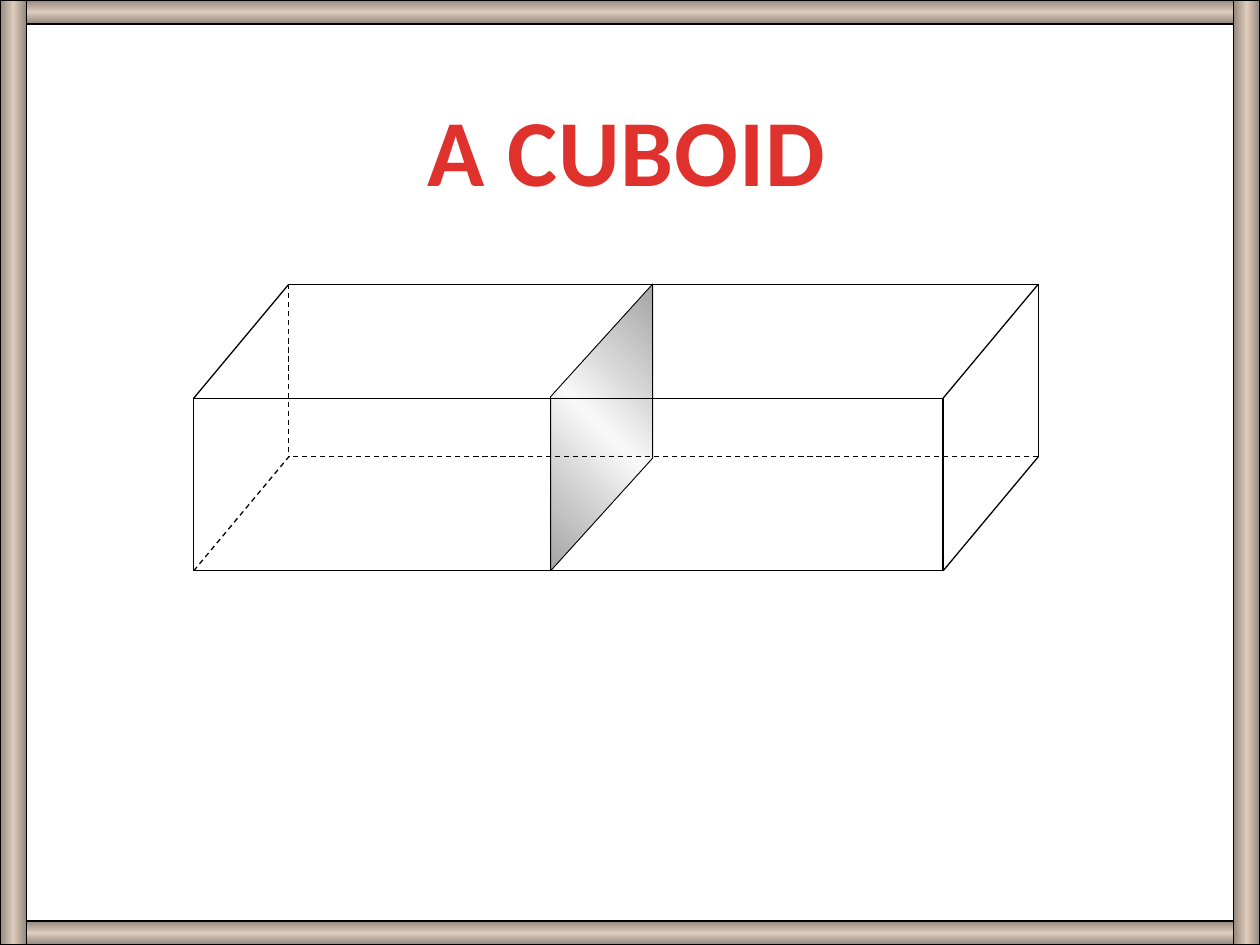
from copy import deepcopy

from lxml import etree
from pptx import Presentation
from pptx.dml.color import RGBColor
from pptx.enum.dml import MSO_LINE
from pptx.enum.shapes import MSO_CONNECTOR, MSO_SHAPE
from pptx.enum.text import MSO_AUTO_SIZE, PP_ALIGN
from pptx.oxml.ns import qn
from pptx.util import Pt

RECT = MSO_SHAPE.RECTANGLE
LINE = MSO_CONNECTOR.STRAIGHT
DASH = MSO_LINE.DASH
CENTER = PP_ALIGN.CENTER
GROW = MSO_AUTO_SIZE.SHAPE_TO_FIT_TEXT

BLACK = RGBColor(0x00, 0x00, 0x00)
DARK = RGBColor(0x93, 0x87, 0x7D)
TAN = RGBColor(0xDE, 0xCC, 0xBC)
GREY = RGBColor(0xA4, 0xA4, 0xA4)
PALE = RGBColor(0xF8, 0xF8, 0xF8)
RED = RGBColor(0xE0, 0x32, 0x2D)
WINE = RGBColor(0xA2, 0x20, 0x1C)

WIDE, HIGH = 720, 540


def shade(fill, node, stops, angle):
    """Give a fill gradient stops of (position, colour) at an angle."""
    fill.gradient()
    fill.gradient_angle = angle
    group = node.find(".//" + qn("a:gsLst"))
    while len(group) < len(stops):
        group.append(deepcopy(group[0]))
    for stop, (place, color) in zip(fill.gradient_stops, stops):
        stop.position = place
        stop.color.rgb = color


def outline(shape, width=0.75):
    """Give a shape a plain black line and no shadow."""
    shape.shadow.inherit = False
    shape.line.color.rgb = BLACK
    shape.line.width = Pt(width)


def edge(slide, start, end, dashed=False):
    """Draw one edge between two points."""
    line = slide.shapes.add_connector(LINE, *map(Pt, start + end))
    line.line.color.rgb = BLACK
    line.line.width = Pt(0.75)
    if dashed:
        line.line.dash_style = DASH
    etree.SubElement(line._element.spPr, qn("a:effectLst"))


def frame(slide, left, top, width, height):
    """Draw the four shaded bars around the box."""
    beam, post = 13.68, 15.12
    bars = [
        (left, top, width, beam, 90),
        (left, top + height - beam, width, beam, 90),
        (left, top, post, height, 0),
        (left + width - post, top, post, height, 0),
    ]
    for *box, angle in bars:
        bar = slide.shapes.add_shape(RECT, *map(Pt, box))
        shade(bar.fill, bar._element, [(0, DARK), (0.5, TAN), (1, DARK)], angle)
        outline(bar)


def title(slide, left, top, width, height):
    """Write the title in the box."""
    box = slide.shapes.add_textbox(*map(Pt, (left, top, width, height)))
    text = box.text_frame
    text.text = "A CUBOID"
    text.word_wrap = False
    text.auto_size = GROW
    line = text.paragraphs[0]
    line.alignment = CENTER
    run = line.runs[0]
    run.font.name = "Calibri"
    run.font.size = Pt(54)
    run.font.bold = True
    shade(run.font.fill, run._r, [(0.25, RED), (1, WINE)], 270)
    run._r.get_or_add_rPr().set("spc", "50")


def divider(slide, left, top, width, height):
    """Draw the shaded cross-section slanting across the box."""
    right, base, rise = left + width, top + height, 64.4
    pen = slide.shapes.build_freeform(Pt(left), Pt(base))
    corners = [(left, top + rise), (right, top), (right, base - rise)]
    pen.add_line_segments([(Pt(x), Pt(y)) for x, y in corners])
    plane = pen.convert_to_shape()
    shade(plane.fill, plane._element, [(0, GREY), (0.5, PALE), (1, GREY)], 45)
    outline(plane, 0.5)


def cuboid(slide, left, top, width, height):
    """Draw the cuboid with its hidden edges dashed."""
    shift, rise = 54.36, 65.16
    right, base = left + width, top + height
    near, low = right - shift, base - rise
    back = left + shift
    edge(slide, (right, low), (back, low), True)
    edge(slide, (left, base), (back, low), True)
    edge(slide, (back, top), (back, low), True)
    box = (left, top + rise, width - shift, height - rise)
    front = slide.shapes.add_shape(RECT, *map(Pt, box))
    front.fill.background()
    outline(front)
    for x, y in [(left, top + rise), (near, top + rise), (near, base)]:
        edge(slide, (x, y), (x + shift, y - rise))
    edge(slide, (back, top), (right, top))
    edge(slide, (right, top), (right, low))


def main():
    """Build and save the slide."""
    deck = Presentation()
    deck.slide_width, deck.slide_height = Pt(WIDE), Pt(HIGH)
    slide = deck.slides.add_slide(deck.slide_layouts[6])
    divider(slide, 314.64, 162.3, 58.32, 163.9)
    frame(slide, 0, 0, WIDE, HIGH)
    cuboid(slide, 110.7, 162.4, 482.6, 163.8)
    title(slide, 235.44, 48.96, 244.8, 72.72)
    deck.save("out.pptx")


if __name__ == "__main__":
    main()
